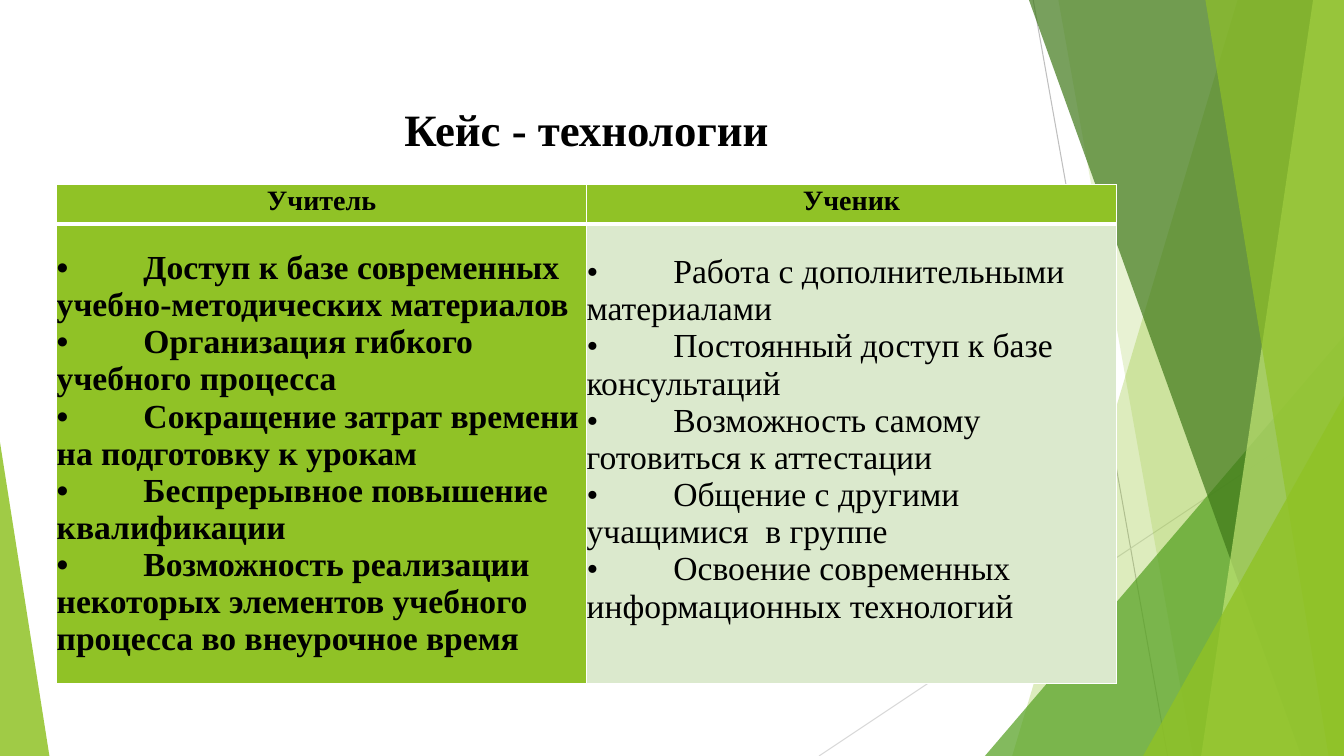
from dataclasses import dataclass

from lxml import etree
from pptx import Presentation
from pptx.dml.color import RGBColor
from pptx.enum.shapes import MSO_CONNECTOR, MSO_SHAPE
from pptx.enum.text import MSO_ANCHOR, PP_ALIGN
from pptx.oxml.ns import qn
from pptx.util import Pt

LINE = MSO_CONNECTOR.STRAIGHT
PEAK = MSO_SHAPE.ISOSCELES_TRIANGLE
MIDDLE = MSO_ANCHOR.MIDDLE
CENTER = PP_ALIGN.CENTER
LEFT = PP_ALIGN.LEFT


@dataclass(frozen=True)
class Theme:
    font: str = "Times New Roman"
    ink: str = "000000"
    white: str = "FFFFFF"
    lime: str = "90C226"
    green: str = "54A021"
    dark: str = "3F7819"
    pale: str = "C0E474"
    mint: str = "DBE9CD"
    gray: str = "BFBFBF"
    light: str = "D9D9D9"
    title: int = 32
    head: int = 20
    body: int = 24


theme = Theme()
WIDE, HIGH = 960, 540


def style(para, size, bold, align):
    para.alignment = align
    font = para.font
    font.name = theme.font
    font.size = Pt(size)
    font.bold = bold
    font.color.rgb = RGBColor.from_string(theme.ink)


def edge(cell, side, width):
    """Draw one white border of a table cell."""
    props = cell._tc.get_or_add_tcPr()
    line = etree.SubElement(props, qn(f"a:ln{side}"), w=str(Pt(width)))
    fill = etree.SubElement(line, qn("a:solidFill"))
    etree.SubElement(fill, qn("a:srgbClr"), val=theme.white)


prs = Presentation()
prs.slide_width, prs.slide_height = Pt(WIDE), Pt(HIGH)
slide = prs.slides.add_slide(prs.slide_layouts[6])
shapes = slide.shapes

# Thin lines behind the facets
for x1, y1, x2, y2, color in [
    (738, 0, 834, HIGH, theme.gray),
    (WIDE, 290, 585, HIGH, theme.light),
]:
    line = shapes.add_connector(LINE, Pt(x1), Pt(y1), Pt(x2), Pt(y2))
    line.line.color.rgb = RGBColor.from_string(color)
    line.line.width = Pt(0.75)
    etree.SubElement(line._element.spPr, qn("a:effectLst"))

# Facets reach the right edge: (top x, bottom x).
# Peaks stand on the bottom edge: (left, top, width, apex).
facets = [
    ((884, 723), theme.lime, 30),
    ((756, 852), theme.lime, 20),
    ((703.5, 240, 256.5, 1), theme.green, 72),
    ((735, 929.5), theme.dark, 70),
    ((938, 858), theme.pale, 70),
    ((861, 949), theme.lime, 65),
    ((816.5, 283, 143.5, 1), theme.lime, 80),
    ((0, 316, 35.3, 0), theme.lime, 85),
]
for place, color, alpha in facets:
    if len(place) == 2:
        top, foot = place
        path = shapes.build_freeform(Pt(top), 0)
        path.add_line_segments(
            [(Pt(WIDE), 0), (Pt(WIDE), Pt(HIGH)), (Pt(foot), Pt(HIGH))]
        )
        facet = path.convert_to_shape()
    else:
        left, top, width, apex = place
        facet = shapes.add_shape(PEAK, Pt(left), Pt(top), Pt(width), Pt(HIGH - top))
        facet.adjustments[0] = apex
    facet.shadow.inherit = False
    facet.line.fill.background()
    facet.fill.solid()
    facet.fill.fore_color.rgb = RGBColor.from_string(color)
    tint = facet._element.spPr.find(".//" + qn("a:srgbClr"))
    etree.SubElement(tint, qn("a:alpha"), val=str(alpha * 1000))

# Table
heads = ["Учитель", "Ученик"]
points = [
    [
        "Доступ к базе современных учебно-методических материалов",
        "Организация гибкого учебного процесса",
        "Сокращение затрат времени на подготовку к урокам",
        "Беспрерывное повышение квалификации",
        "Возможность реализации некоторых элементов учебного процесса во внеурочное время",
    ],
    [
        "Работа с дополнительными материалами",
        "Постоянный доступ к базе консультаций",
        "Возможность самому готовиться к аттестации",
        "Общение с другими учащимися\u00a0 в группе".replace("\u00a0", " "),
        "Освоение современных информационных технологий",
    ],
]
fills = [theme.lime, theme.mint]
rows = [28, 328.5]
table = shapes.add_table(2, 2, Pt(40.5), Pt(132), Pt(757), Pt(sum(rows))).table
for row, height in zip(table.rows, rows):
    row.height = Pt(height)
for col in table.columns:
    col.width = Pt(378.5)

for c in range(2):
    head, body = table.cell(0, c), table.cell(1, c)
    for cell, color in [(head, theme.lime), (body, fills[c])]:
        cell.margin_left = cell.margin_right = 0
        cell.margin_top = cell.margin_bottom = 0
        cell.vertical_anchor = MIDDLE
        for side in "LRTB":
            split = (cell is head and side == "B") or (cell is body and side == "T")
            edge(cell, side, 3 if split else 1)
        cell.fill.solid()
        cell.fill.fore_color.rgb = RGBColor.from_string(color)

    para = head.text_frame.paragraphs[0]
    para.text = heads[c]
    para.line_spacing = Pt(16.8)
    style(para, theme.head, True, CENTER)

    frame = body.text_frame
    for n, point in enumerate(points[c]):
        para = frame.add_paragraph() if n else frame.paragraphs[0]
        para.text = "•\t" + point
        tabs = etree.SubElement(para._p.get_or_add_pPr(), qn("a:tabLst"))
        etree.SubElement(tabs, qn("a:tab"), pos=str(Pt(62)), algn="l")
        style(para, theme.body, c == 0, LEFT)
table.cell(1, 1).margin_bottom = Pt(20.6)

# Title
box = shapes.add_textbox(Pt(187), Pt(68.5), Pt(464), Pt(63.5))
frame = box.text_frame
frame.word_wrap = True
frame.vertical_anchor = MIDDLE
frame.margin_bottom = Pt(20.6)
para = frame.paragraphs[0]
para.text = "Кейс - технологии"
style(para, theme.title, True, CENTER)

prs.save("out.pptx")
